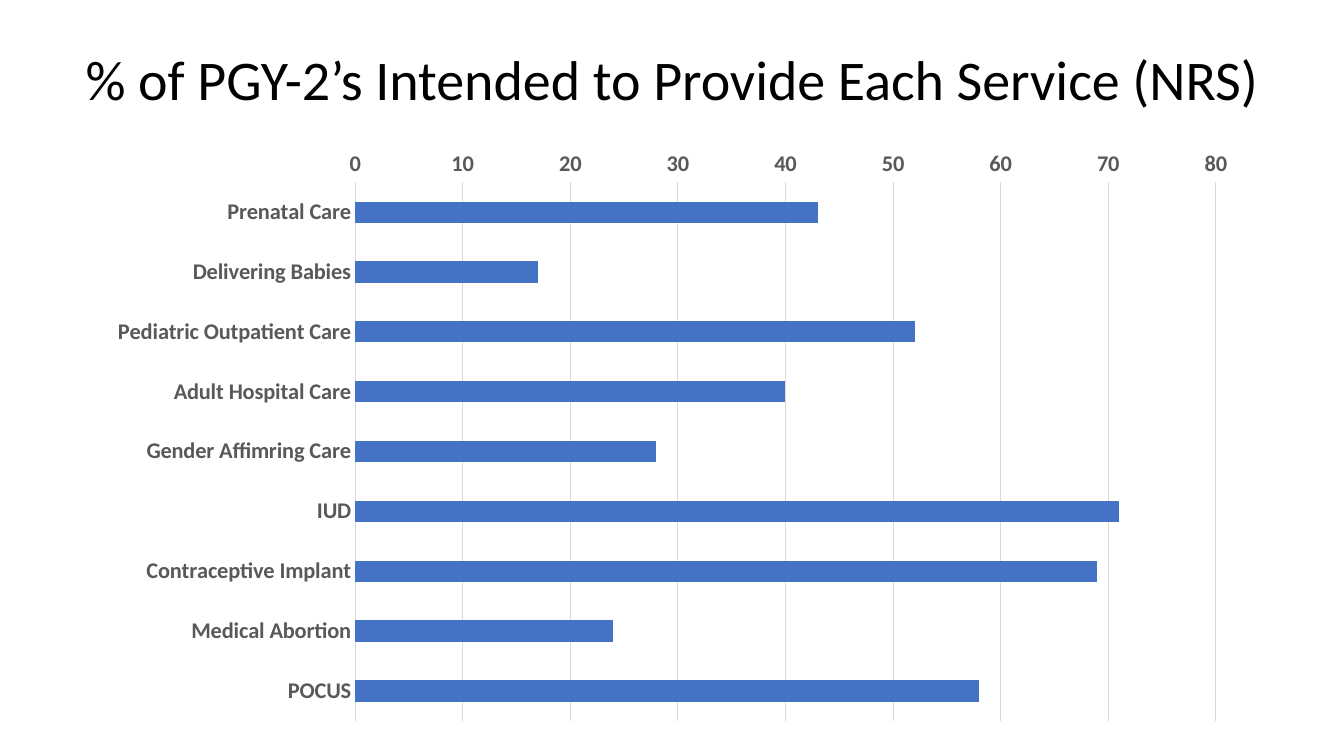
from pptx import Presentation
from pptx.chart.data import CategoryChartData
from pptx.dml.color import RGBColor
from pptx.enum.chart import XL_CHART_TYPE, XL_TICK_MARK
from pptx.enum.text import MSO_ANCHOR, PP_ALIGN
from pptx.util import Inches, Pt

BAR_CLUSTERED = XL_CHART_TYPE.BAR_CLUSTERED
NO_TICKS = XL_TICK_MARK.NONE
MIDDLE = MSO_ANCHOR.MIDDLE
CENTER = PP_ALIGN.CENTER

# Content
HEADING = "% of PGY-2’s Intended to Provide Each Service (NRS)"
SERVICES = {
    "Prenatal Care": 43,
    "Delivering Babies": 17,
    "Pediatric Outpatient Care": 52,
    "Adult Hospital Care": 40,
    "Gender Affimring Care": 28,
    "IUD": 71,
    "Contraceptive Implant": 69,
    "Medical Abortion": 24,
    "POCUS": 58,
}

# Style
FONT = "Calibri"
BLACK, GRAY, LIGHT, BLUE = "000000", "595959", "D9D9D9", "4472C4"


def set_font(font, size, color, bold=False):
    font.name = FONT
    font.size = Pt(size)
    font.bold = bold
    font.color.rgb = RGBColor.from_string(color)


def set_line(line, color, width=0.75):
    line.color.rgb = RGBColor.from_string(color)
    line.width = Pt(width)


def add_heading(slide):
    heading = slide.shapes.title
    heading.left, heading.top = Inches(0.17), Inches(0.09)
    heading.width, heading.height = Inches(12.99), Inches(1.45)
    frame = heading.text_frame
    frame.text = HEADING
    frame.word_wrap = True
    frame.vertical_anchor = MIDDLE
    paragraph = frame.paragraphs[0]
    paragraph.alignment = CENTER
    paragraph.line_spacing = 0.9
    set_font(paragraph.runs[0].font, 40, BLACK)


def add_services_chart(slide):
    data = CategoryChartData()
    data.categories = list(SERVICES)
    data.add_series("Series 1", list(SERVICES.values()))
    chart = slide.shapes.add_chart(
        BAR_CLUSTERED, Inches(0.94), Inches(1.38), Inches(11.46), Inches(5.89), data
    ).chart
    chart.has_legend = False
    chart.has_title = False
    set_font(chart.font, 10, BLACK)

    # Bars
    plot = chart.plots[0]
    plot.gap_width = 182
    plot.vary_by_categories = False
    bars = plot.series[0].format.fill
    bars.solid()
    bars.fore_color.rgb = RGBColor.from_string(BLUE)

    # Axes
    services, percent = chart.category_axis, chart.value_axis
    for axis in (services, percent):
        axis.major_tick_mark = axis.minor_tick_mark = NO_TICKS
        set_font(axis.tick_labels.font, 16, GRAY, bold=True)
    services.reverse_order = True
    set_line(services.format.line, LIGHT)
    percent.minimum_scale, percent.maximum_scale = 0, 80
    percent.major_unit = 10
    percent.format.line.fill.background()
    percent.has_major_gridlines = True
    set_line(percent.major_gridlines.format.line, LIGHT)


def main():
    deck = Presentation()
    deck.slide_width, deck.slide_height = Inches(13.33), Inches(7.5)
    title_only = deck.slide_layouts[5]
    slide = deck.slides.add_slide(title_only)
    add_services_chart(slide)
    add_heading(slide)
    deck.save("out.pptx")


if __name__ == "__main__":
    main()
